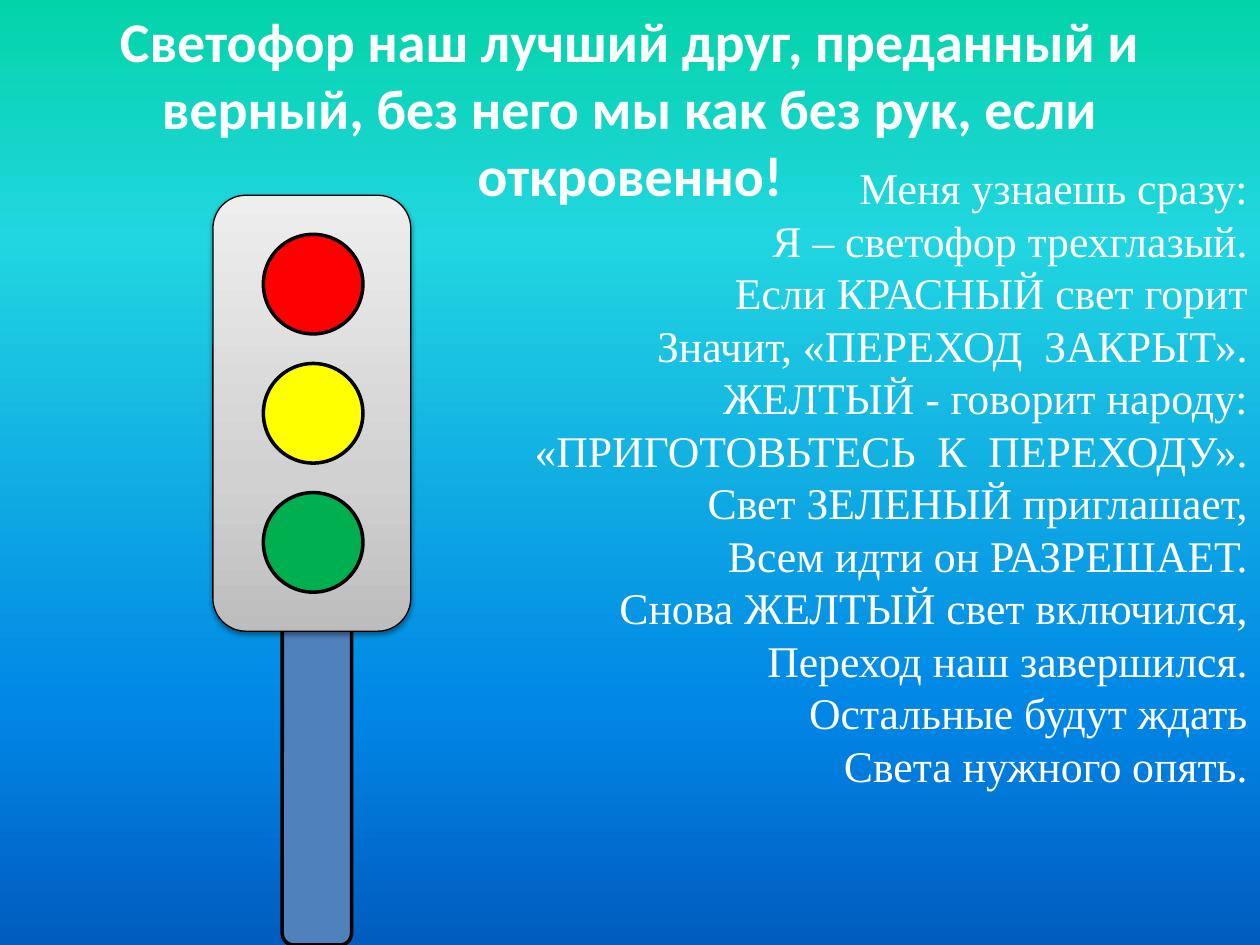
from lxml import etree
from pptx import Presentation
from pptx.dml.color import RGBColor
from pptx.enum.shapes import MSO_SHAPE as Shape
from pptx.enum.text import MSO_ANCHOR as Anchor, MSO_AUTO_SIZE as AutoSize, PP_ALIGN as Align
from pptx.oxml import parse_xml
from pptx.oxml.ns import nsdecls, qn
from pptx.util import Inches, Pt


def color(hex_string):
    return RGBColor.from_string(hex_string)


def set_gradient(fill, element, stops, angle):
    """Fill with any number of (percent, colour) stops, angle clockwise."""
    fill.gradient()
    grad = element.find(".//" + qn("a:gradFill"))
    stop_list = grad.find(qn("a:gsLst"))
    for old_stop in list(stop_list):
        stop_list.remove(old_stop)
    for percent, hex_string in stops:
        stop = etree.SubElement(stop_list, qn("a:gs"), pos=str(percent * 1000))
        etree.SubElement(stop, qn("a:srgbClr"), val=hex_string)
    grad.find(qn("a:lin")).set("ang", str(angle * 60000))


prs = Presentation()
prs.slide_width, prs.slide_height = Inches(10), Inches(7.5)
slide = prs.slides.add_slide(prs.slide_layouts[5])
shapes = slide.shapes

# Background
sky = [(0, "03D4A8"), (25, "21D6E0"), (75, "0087E6"), (100, "005CBF")]
set_gradient(slide.background.fill, slide.element, sky, 90)

# Pole
pole = shapes.add_shape(Shape.ROUNDED_RECTANGLE, Inches(2.24), Inches(4.85), Inches(0.55), Inches(2.65))
pole.shadow.inherit = False
pole.fill.solid()
pole.fill.fore_color.rgb = color("4F81BD")
pole.line.color.rgb = color("000000")
pole.line.width = Pt(2)

# Title
title = shapes.title
title.left, title.top, title.width, title.height = 0, 0, Inches(10), Inches(1.39)
title_frame = title.text_frame
title_frame.word_wrap = True
title_frame.auto_size = AutoSize.NONE
title_frame.vertical_anchor = Anchor.TOP
slogan = title_frame.paragraphs[0]
slogan.alignment = Align.CENTER
slogan_run = slogan.add_run()
slogan_run.text = "Светофор наш лучший друг, преданный и верный, без него мы как без рук, если откровенно!"
slogan_run.font.name = "Calibri"
slogan_run.font.size = Pt(32)
slogan_run.font.bold = True
slogan_run.font.color.rgb = color("FFFFFF")

# Poem
poem_lines = [
    "Меня узнаешь сразу:",
    "Я – светофор трехглазый.",
    "Если КРАСНЫЙ свет горит",
    "Значит, «ПЕРЕХОД  ЗАКРЫТ».",
    "ЖЕЛТЫЙ - говорит народу:",
    "«ПРИГОТОВЬТЕСЬ  К  ПЕРЕХОДУ».",
    "Свет ЗЕЛЕНЫЙ приглашает,",
    "Всем идти он РАЗРЕШАЕТ.",
    "Снова ЖЕЛТЫЙ свет включился,",
    "Переход наш завершился.",
    "Остальные будут ждать",
    "Света нужного опять.",
]
poem_box = shapes.add_textbox(Inches(4.06), Inches(1.23), Inches(5.94), Inches(5.15))
poem_box.text_frame.word_wrap = True
poem_box.text_frame.auto_size = AutoSize.SHAPE_TO_FIT_TEXT
poem = poem_box.text_frame.paragraphs[0]
poem.alignment = Align.RIGHT
for number, line in enumerate(poem_lines):
    if number:
        poem.add_line_break()
    line_run = poem.add_run()
    line_run.text = line
    line_run.font.name = "Times New Roman"
    line_run.font.size = Pt(25)
    line_run.font.color.rgb = color("FFFFFF")

# Traffic light housing with a soft shadow below
housing = shapes.add_shape(Shape.ROUNDED_RECTANGLE, Inches(1.69), Inches(1.55), Inches(1.57), Inches(3.46))
housing_props = housing.element.spPr
set_gradient(housing.fill, housing_props, [(0, "BDBDBD"), (35, "D1D1D1"), (100, "EEEEEE")], 270)
housing.line.color.rgb = color("000000")
housing.line.width = Pt(0.75)
housing_props.append(parse_xml(
    f'<a:effectLst {nsdecls("a")}>'
    f'<a:outerShdw blurRad="{Pt(3.1)}" dist="{Pt(1.6)}" dir="5400000" rotWithShape="0">'
    '<a:srgbClr val="000000"><a:alpha val="38000"/></a:srgbClr>'
    '</a:outerShdw></a:effectLst>'))

# Lamps, evenly spaced from top to bottom
for position, lamp_color in enumerate(["FF0000", "FFFF00", "00B050"]):
    lamp = shapes.add_shape(
        Shape.OVAL, Inches(2.09), Inches(1.86 + 1.025 * position), Inches(0.79), Inches(0.79))
    lamp.shadow.inherit = False
    lamp.fill.solid()
    lamp.fill.fore_color.rgb = color(lamp_color)
    lamp.line.color.rgb = color("000000")
    lamp.line.width = Pt(2)

prs.save("out.pptx")
